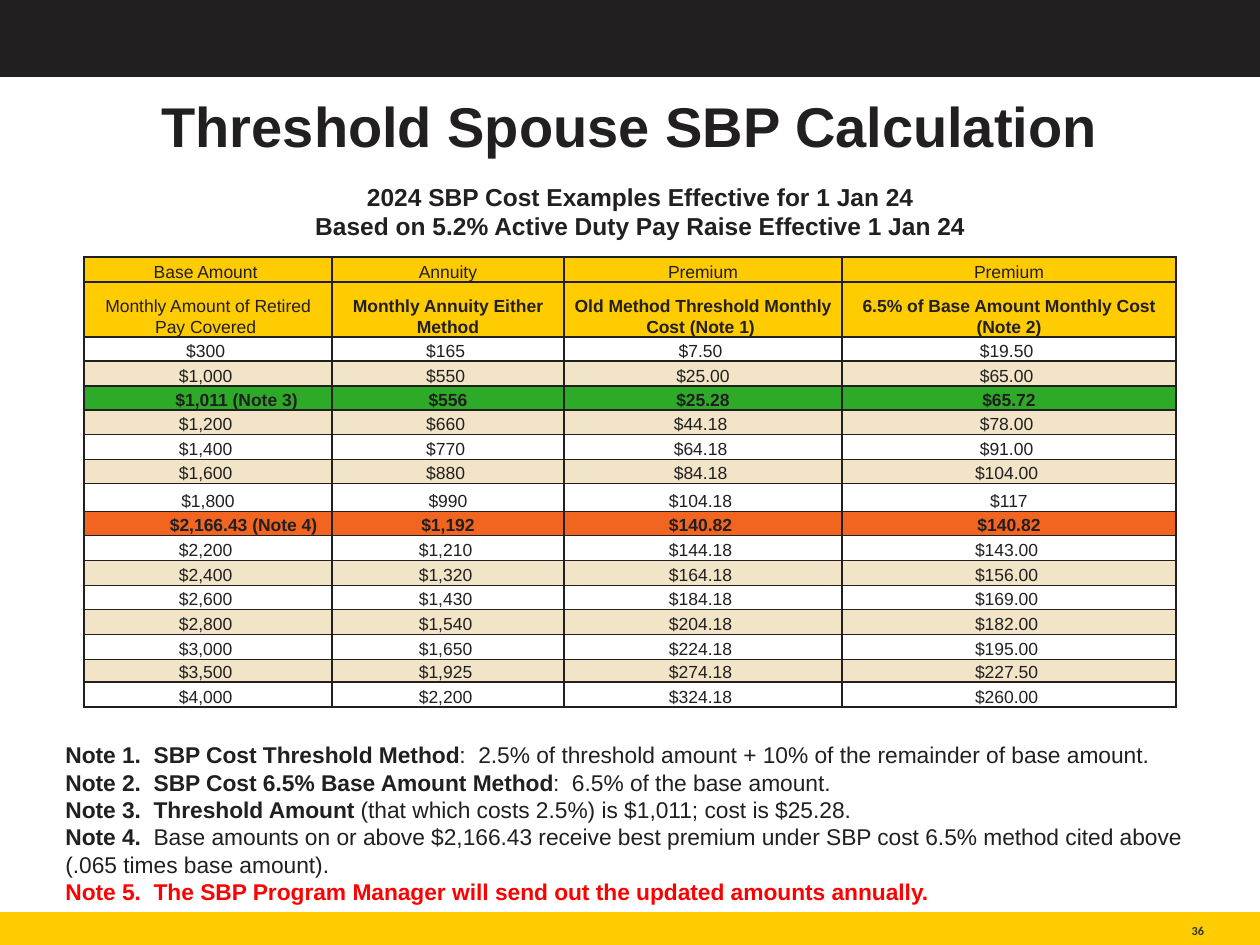
from dataclasses import dataclass

from pptx import Presentation
from pptx.dml.color import RGBColor
from pptx.enum.shapes import MSO_SHAPE
from pptx.enum.text import MSO_ANCHOR, MSO_AUTO_SIZE, PP_ALIGN
from pptx.oxml import parse_xml
from pptx.oxml.ns import nsdecls
from pptx.util import Emu, Pt


@dataclass(frozen=True)
class Theme:
    font: str = "Arial"
    number_font: str = "Calibri"
    ink: str = "221F20"
    gold: str = "FFCC01"
    white: str = "FFFFFF"
    sand: str = "F1E4C7"
    green: str = "2DAA27"
    orange: str = "F16521"
    red: str = "FF0000"
    number_ink: str = "2F372F"
    title: int = 32
    subtitle: int = 14
    note: int = 13
    cell: int = 10
    number: int = 7


theme = Theme()
PX = 914400 / 126


def px(*lengths):
    return [Emu(round(n * PX)) for n in lengths]


def add_run(p, text, size, bold=False, color=theme.ink, font=theme.font):
    r = p.add_run()
    r.text = text
    r.font.size = Pt(size)
    r.font.bold = bold
    r.font.name = font
    r.font.color.rgb = RGBColor.from_string(color)


prs = Presentation()
prs.slide_width, prs.slide_height = px(1260, 945)
s = prs.slides.add_slide(prs.slide_layouts[5])

# Top and bottom bands
for top, height, color in ((1, 75, theme.ink), (913, 34, theme.gold)):
    sp = s.shapes.add_shape(MSO_SHAPE.RECTANGLE, *px(0, top, 1260, height))
    sp.shadow.inherit = False
    sp.fill.solid()
    sp.fill.fore_color.rgb = RGBColor.from_string(color)
    sp.line.color.rgb = RGBColor.from_string(color)
    sp.line.width = Pt(1)

# Slide number
tf = s.shapes.add_textbox(*px(1094, 913, 110, 25)).text_frame
tf.margin_left = tf.margin_right = tf.margin_top = tf.margin_bottom = 0
tf.vertical_anchor = MSO_ANCHOR.BOTTOM
tf.word_wrap = False
p = tf.paragraphs[0]
p.alignment = PP_ALIGN.RIGHT
add_run(p, "36", theme.number, True, theme.number_ink, theme.number_font)

# Notes: each is a list of (text, bold) runs
notes = [
    [("Note 1.  SBP Cost Threshold Method", True),
     (":  2.5% of threshold amount + 10% of the remainder of base amount.", False)],
    [("Note 2.  SBP Cost 6.5% Base Amount Method", True),
     (":  6.5% of the base amount.", False)],
    [("Note 3.  Threshold Amount", True),
     (" (that which costs 2.5%) is $1,011; cost is $25.28.", False)],
    [("Note 4.", True),
     ("  Base amounts on or above $2,166.43 receive best premium under SBP cost "
      "6.5% method cited above (.065 times base amount).", False)],
    [("Note 5.  The SBP Program Manager will send out the updated amounts annually.",
      True)],
]
tf = s.shapes.add_textbox(*px(53, 735, 1176, 178)).text_frame
tf.word_wrap = True
for i, runs in enumerate(notes):
    p = tf.add_paragraph() if i else tf.paragraphs[0]
    color = theme.red if i == len(notes) - 1 else theme.ink
    for text, bold in runs:
        add_run(p, text, theme.note, bold, color)

# Subtitle
tf = s.shapes.add_textbox(*px(189, 175, 903, 72)).text_frame
tf.word_wrap = True
tf.vertical_anchor = MSO_ANCHOR.MIDDLE
for i, text in enumerate(("2024 SBP Cost Examples Effective for 1 Jan 24",
                          "Based on 5.2% Active Duty Pay Raise Effective 1 Jan 24")):
    p = tf.add_paragraph() if i else tf.paragraphs[0]
    p.alignment = PP_ALIGN.CENTER
    add_run(p, text, theme.subtitle, True)

# Title
title = s.shapes.title
title.left, title.top, title.width, title.height = px(87, 93, 1086, 139)
tf = title.text_frame
tf.word_wrap = True
tf.auto_size = MSO_AUTO_SIZE.NONE
tf.vertical_anchor = MSO_ANCHOR.TOP
p = tf.paragraphs[0]
p.alignment = PP_ALIGN.CENTER
p.line_spacing = 0.9
add_run(p, "Threshold Spouse SBP Calculation", theme.title, True)

# Cost table: row height, fill, cells
rows = [
    (25, theme.gold, "Base Amount |Annuity|Premium|Premium"),
    (55, theme.gold, "Monthly Amount of Retired Pay Covered |Monthly Annuity Either Method|"
                     "Old Method Threshold Monthly Cost (Note 1) |"
                     "6.5% of Base Amount Monthly Cost (Note 2)"),
    (24, theme.white, "$300 |$165 |$7.50 |$19.50 "),
    (25, theme.sand, "$1,000 |$550 |$25.00|$65.00 "),
    (24, theme.green, "$1,011 (Note 3)|$556|$25.28|$65.72"),
    (25, theme.sand, "$1,200 |$660 |$44.18 |$78.00 "),
    (25, theme.white, "$1,400 |$770 |$64.18 |$91.00 "),
    (24, theme.sand, "$1,600 |$880 |$84.18 |$104.00 "),
    (28, theme.white, "$1,800|$990|$104.18 |$117"),
    (24, theme.orange, "$2,166.43 (Note 4)|$1,192|$140.82 |$140.82"),
    (25, theme.white, "$2,200 |$1,210 |$144.18 |$143.00 "),
    (25, theme.sand, "$2,400 |$1,320 |$164.18 |$156.00 "),
    (24, theme.white, "$2,600 |$1,430 |$184.18 |$169.00 "),
    (25, theme.sand, "$2,800 |$1,540 |$204.18 |$182.00 "),
    (25, theme.white, "$3,000 |$1,650 |$224.18 |$195.00 "),
    (21, theme.sand, "$3,500 |$1,925 |$274.18 |$227.50 "),
    (25, theme.white, "$4,000 |$2,200 |$324.18 |$260.00 "),
]
col_widths = px(248, 232, 278, 334)
indents = {theme.green: 57, theme.orange: 71}  # shift of the highlighted base amounts

table = s.shapes.add_table(len(rows), len(col_widths), *px(84, 257, 1092, 449)).table
table.first_row = table.horz_banding = False
for col, width in zip(table.columns, col_widths):
    col.width = width
for i, (height, fill, line) in enumerate(rows):
    table.rows[i].height = px(height)[0]
    for j, text in enumerate(line.split("|")):
        cell = table.cell(i, j)
        indent = indents.get(fill, 0) if j == 0 else 0
        cell.margin_left, cell.margin_right = px(9 + indent, 9)
        cell.margin_top = cell.margin_bottom = 0
        cell.vertical_anchor = MSO_ANCHOR.BOTTOM
        tcPr = cell._tc.get_or_add_tcPr()
        for side in ("lnL", "lnR", "lnT", "lnB"):
            tcPr.append(parse_xml(
                f'<a:{side} {nsdecls("a")} w="12700"><a:solidFill>'
                f'<a:srgbClr val="{theme.ink}"/></a:solidFill></a:{side}>'))
        cell.fill.solid()
        cell.fill.fore_color.rgb = RGBColor.from_string(fill)
        p = cell.text_frame.paragraphs[0]
        p.alignment = PP_ALIGN.CENTER
        p.line_spacing = 1.07
        add_run(p, text, theme.cell, fill in indents or (i == 1 and j > 0))

prs.save("out.pptx")
